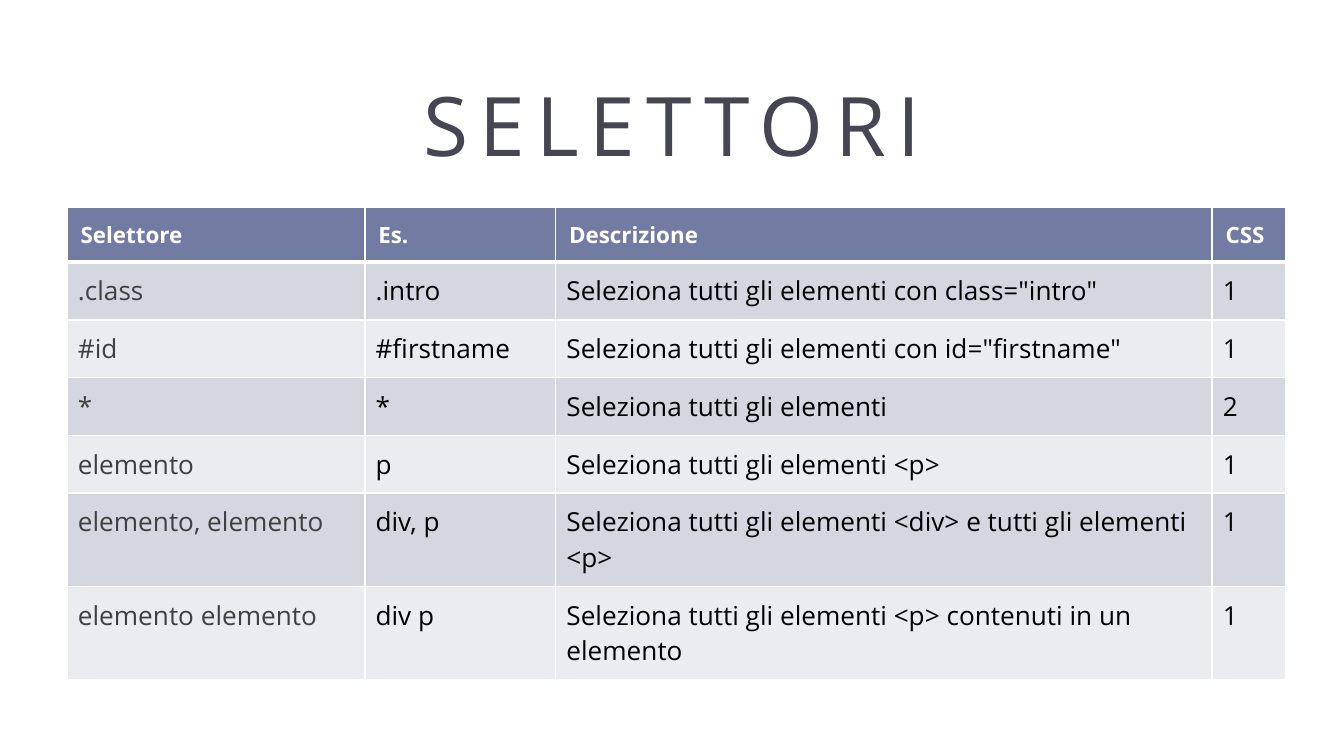
"""Build the slide that lists the CSS selectors."""
from lxml import etree
from pptx import Presentation
from pptx import util as u
from pptx.dml.color import RGBColor
from pptx.enum import text
from pptx.oxml import ns

SCALE = 4572
FONT = "Open Sans"
WHITE = RGBColor(0xFF, 0xFF, 0xFF)
BLACK = RGBColor(0x00, 0x00, 0x00)
GREY = RGBColor(0x40, 0x40, 0x40)
SLATE = RGBColor(0x46, 0x46, 0x53)
HEADER = RGBColor(0x72, 0x7C, 0xA3)
BANDS = (RGBColor(0xD5, 0xD7, 0xE0), RGBColor(0xEB, 0xEC, 0xF0))

COLUMN_WIDTHS = (443, 284, 977, 110)
ROW_HEIGHTS = (81, 86, 86, 86, 86, 139, 139)
CELL_MARGIN = 16
SELECTORS = (
    ("Selettore", "Es.", "Descrizione", "CSS"),
    (".class", ".intro", 'Seleziona tutti gli elementi con class="intro"', "1"),
    ("#id", "#firstname", 'Seleziona tutti gli elementi con id="firstname"', "1"),
    ("*", "*", "Seleziona tutti gli elementi", "2"),
    ("elemento", "p", "Seleziona tutti gli elementi <p>", "1"),
    ("elemento, elemento", "div, p",
     "Seleziona tutti gli elementi <div> e tutti gli elementi <p>", "1"),
    ("elemento elemento", "div p",
     "Seleziona tutti gli elementi <p> contenuti in un elemento", "1"),
)


def px(length):
    """Turn px into EMU."""
    return u.Emu(length * SCALE)


def style_text(para, size, color, bold=False):
    """Format every run of a paragraph."""
    for span in para.runs:
        span.font.name = FONT
        span.font.size = u.Pt(size)
        span.font.bold = bold
        span.font.color.rgb = color


def add_title(page, left, top, width, height):
    """Place the letter-spaced title, centred in its box."""
    box = page.shapes.add_textbox(px(left), px(top), px(width), px(height))
    frame = box.text_frame
    frame.word_wrap = True
    frame.vertical_anchor = text.MSO_ANCHOR.MIDDLE
    frame.text = "SELETTORI"
    para = frame.paragraphs[0]
    para.alignment = text.PP_ALIGN.CENTER
    style_text(para, 44, SLATE)
    para.runs[0].font._element.set("spc", "600")


def draw_borders(cell, bottom_points):
    """Give a cell white borders, with its own width at the bottom."""
    properties = cell._tc.get_or_add_tcPr()
    for side, points in (("L", 1), ("R", 1), ("T", 1), ("B", bottom_points)):
        line = etree.SubElement(properties, ns.qn(f"a:ln{side}"), w=str(u.Pt(points)))
        fill = etree.SubElement(line, ns.qn("a:solidFill"))
        etree.SubElement(fill, ns.qn("a:srgbClr"), val=str(WHITE))


def fill_cell(cell, wording, row, column):
    """Write and format one cell of the header or the body."""
    is_header = row == 0
    draw_borders(cell, 3 if is_header else 1)
    cell.fill.solid()
    cell.fill.fore_color.rgb = HEADER if is_header else BANDS[(row - 1) % 2]
    cell.text_frame.text = wording
    para = cell.text_frame.paragraphs[0]
    if is_header:
        cell.vertical_anchor = text.MSO_ANCHOR.MIDDLE
        style_text(para, 12, WHITE, bold=True)
    else:
        cell.margin_left = cell.margin_right = px(CELL_MARGIN)
        cell.margin_top = cell.margin_bottom = px(CELL_MARGIN)
        style_text(para, 14, GREY if column == 0 else BLACK)


def add_selector_table(page, left, top):
    """Place the table of selectors from its top left corner."""
    width, height = sum(COLUMN_WIDTHS), sum(ROW_HEIGHTS)
    table = page.shapes.add_table(
        len(SELECTORS), len(COLUMN_WIDTHS), px(left), px(top), px(width), px(height)
    ).table
    for column, column_width in zip(table.columns, COLUMN_WIDTHS):
        column.width = px(column_width)
    for row, entries in enumerate(SELECTORS):
        table.rows[row].height = px(ROW_HEIGHTS[row])
        for column, wording in enumerate(entries):
            fill_cell(table.cell(row, column), wording, row, column)


def main():
    """Build and save the deck."""
    deck = Presentation()
    deck.slide_width, deck.slide_height = px(2000), px(1125)
    page = deck.slides.add_slide(deck.slide_layouts[6])
    add_title(page, 100, 90, 1800, 188)
    add_selector_table(page, 100, 309)
    deck.save("out.pptx")


if __name__ == "__main__":
    main()
